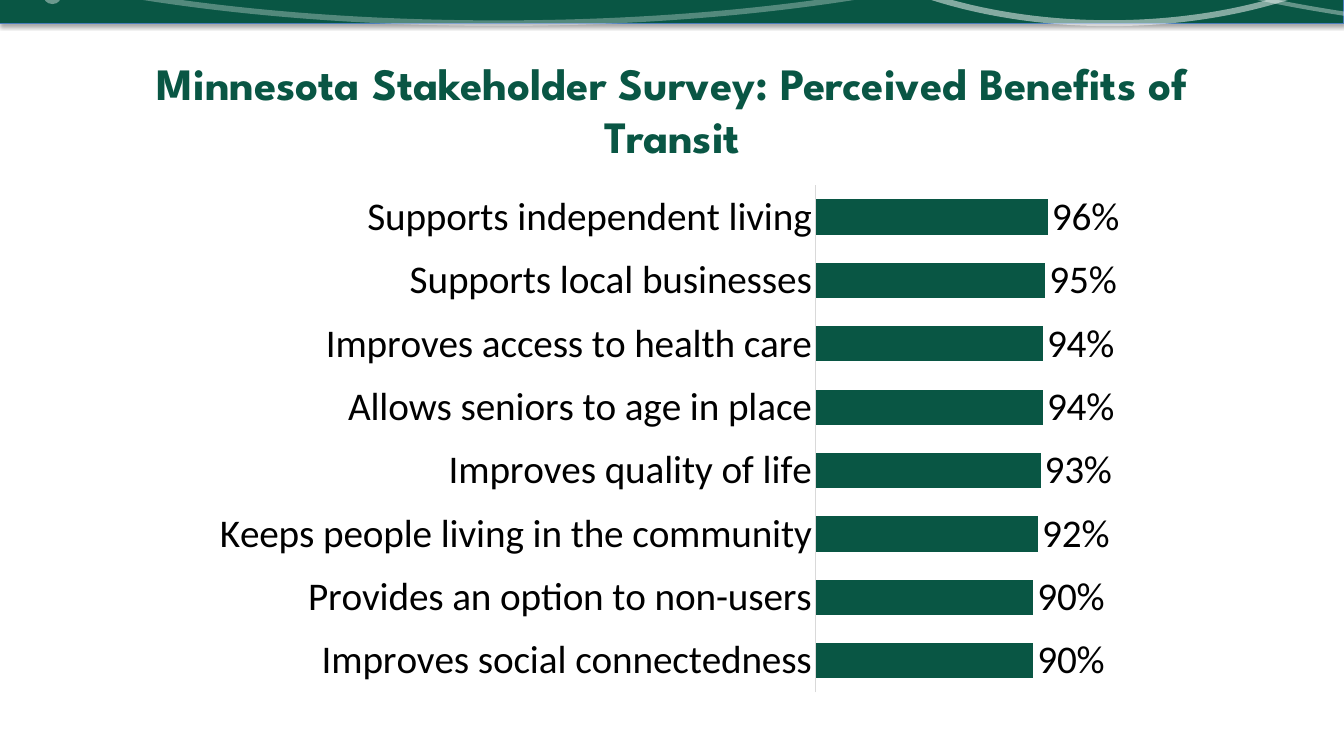
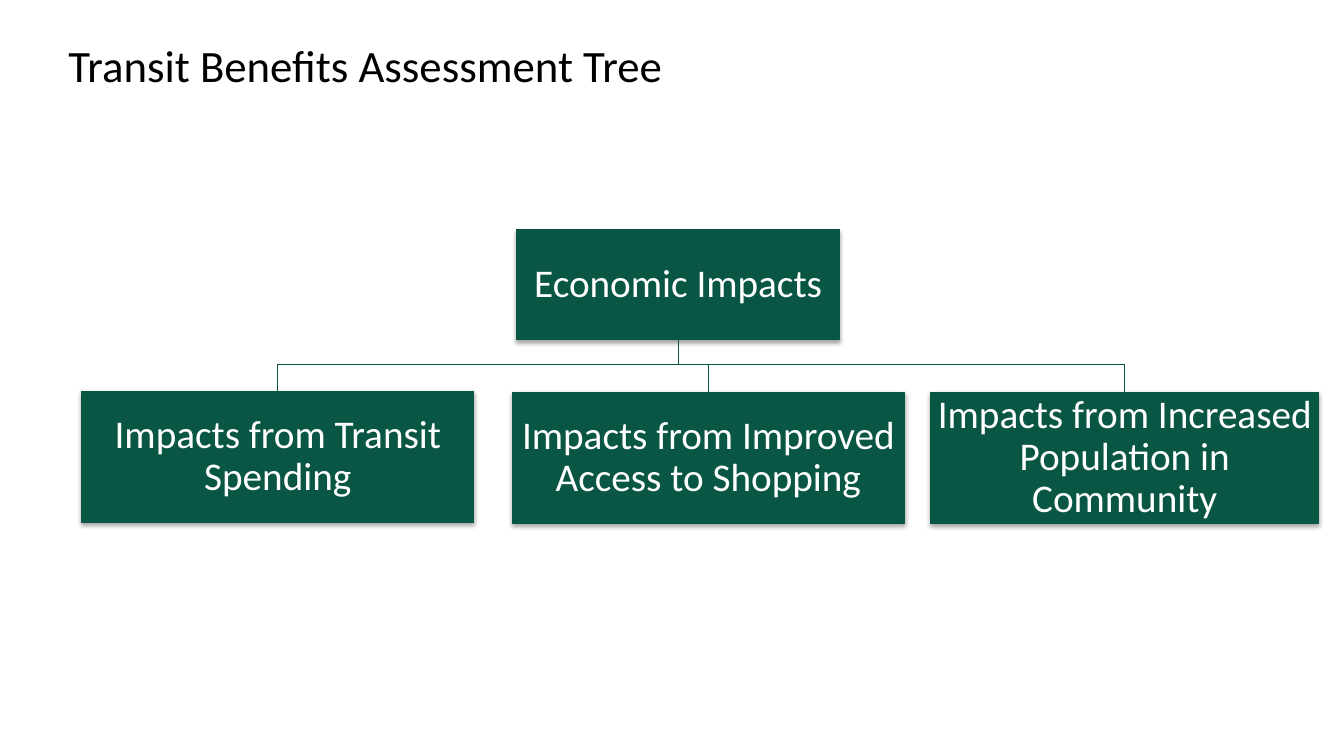
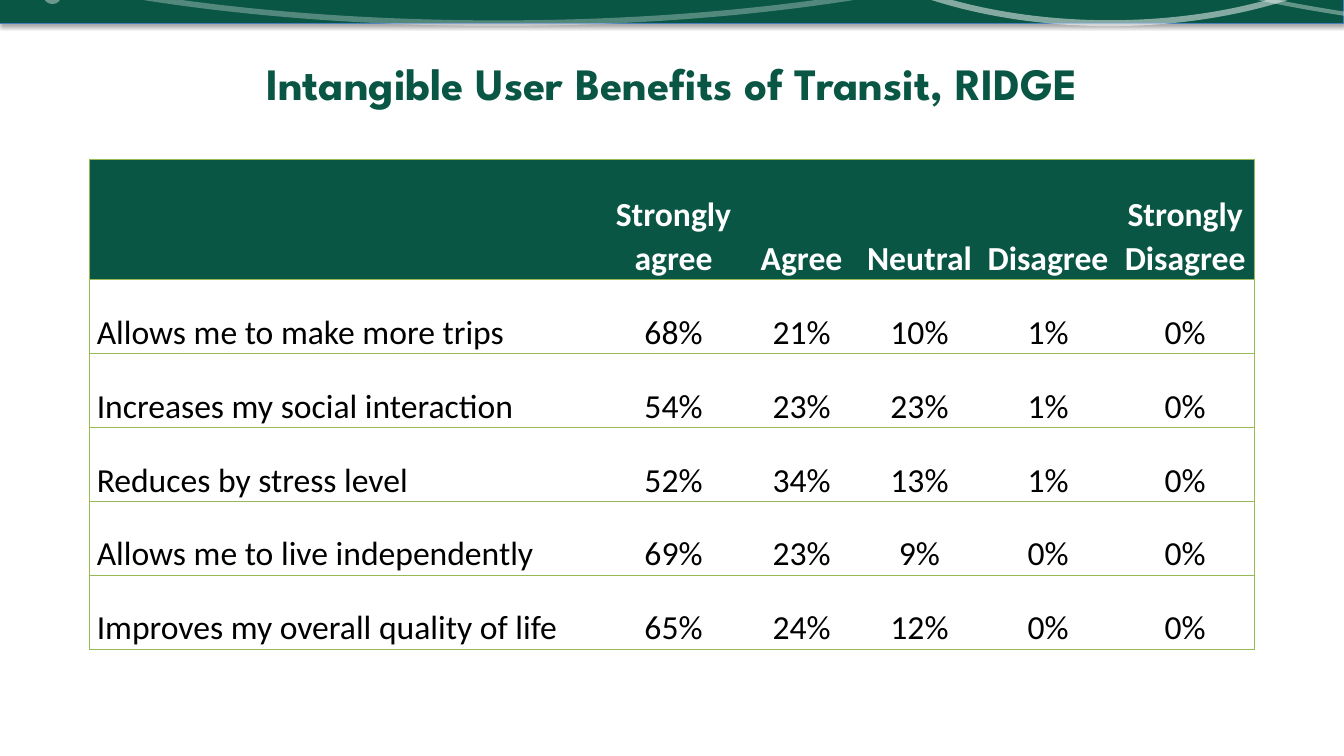
"""Build three slides on the benefits of transit: a bar chart, a tree and a table."""
from lxml import etree
from pptx import Presentation
from pptx.chart.data import CategoryChartData
from pptx.dml.color import RGBColor
from pptx.enum.chart import XL_CHART_TYPE, XL_LABEL_POSITION, XL_TICK_MARK
from pptx.enum.shapes import MSO_SHAPE
from pptx.enum.text import MSO_ANCHOR, MSO_AUTO_SIZE, PP_ALIGN
from pptx.oxml.ns import qn
from pptx.util import Inches, Pt

GREEN = RGBColor(0x09, 0x56, 0x44)
LIME = RGBColor(0x98, 0xB9, 0x55)
BLUE = RGBColor(0x4B, 0x7E, 0xBC)
GRAY = RGBColor(0xD9, 0xD9, 0xD9)
WHITE = RGBColor(0xFF, 0xFF, 0xFF)
BLACK = RGBColor(0x00, 0x00, 0x00)

BODY_FONT = "Calibri"
TITLE_FONT = "League Spartan"
HAIRLINE = Pt(0.75)

RECTANGLE = MSO_SHAPE.RECTANGLE
OVAL = MSO_SHAPE.OVAL
CENTER = PP_ALIGN.CENTER
LEFT = PP_ALIGN.LEFT
MIDDLE = MSO_ANCHOR.MIDDLE
BOTTOM = MSO_ANCHOR.BOTTOM
BAR_CLUSTERED = XL_CHART_TYPE.BAR_CLUSTERED
OUTSIDE_END = XL_LABEL_POSITION.OUTSIDE_END
NO_TICK = XL_TICK_MARK.NONE
GROW = MSO_AUTO_SIZE.SHAPE_TO_FIT_TEXT

BAND_ARCS = [
    ((-2.22, -3.75, 14.33, 3.98), 4, 30),
    ((7.67, -3.2, 6.67, 3.43), 4.25, 50),
    ((10.49, -2.5, 13.96, 2.92), 3, 37),
]

CHART_PLACE = (-0.85, 1.64, 12.98, 5.6)
PLOT_PLACE = (8.09, 1.84, 2.4, 5.03)
BENEFITS = [
    ("Supports independent living", 0.96),
    ("Supports local businesses", 0.95),
    ("Improves access to health care", 0.94),
    ("Allows seniors to age in place", 0.94),
    ("Improves quality of life", 0.93),
    ("Keeps people living in the community", 0.92),
    ("Provides an option to non-users", 0.9),
    ("Improves social connectedness", 0.9),
]

IMPACTS = [
    ("Impacts from Transit Spending", (0.81, 3.88, 3.89, 1.3)),
    ("Impacts from Improved Access to Shopping", (5.08, 3.89, 3.89, 1.3)),
    ("Impacts from Increased Population in Community", (9.23, 3.89, 3.85, 1.3)),
]

ANSWERS = [
    ("", "Strongly agree", "Agree", "Neutral", "Disagree", "Strongly Disagree"),
    ("Allows me to make more trips", "68%", "21%", "10%", "1%", "0%"),
    ("Increases my social interaction", "54%", "23%", "23%", "1%", "0%"),
    ("Reduces by stress level", "52%", "34%", "13%", "1%", "0%"),
    ("Allows me to live independently", "69%", "23%", "9%", "0%", "0%"),
    ("Improves my overall quality of life", "65%", "24%", "12%", "0%", "0%"),
]
COLUMN_WIDTHS = [5.09, 1.4, 1.14, 1.2, 1.35, 1.37]
TABLE_HEIGHT, HEADER_HEIGHT = 4.86, 1.19


def style_font(font, size, color, name=BODY_FONT, bold=False):
    font.name = name
    font.size = Pt(size)
    font.bold = bold
    font.color.rgb = color


def write(para, text, size, color, align=LEFT, **style):
    para.alignment = align
    span = para.add_run()
    span.text = text
    style_font(span.font, size, color, **style)


def add_shape(page, kind, place):
    shape = page.shapes.add_shape(kind, *map(Inches, place))
    shape.shadow.inherit = False
    return shape


def set_alpha(fill_parent, percent):
    color = next(fill_parent.iter(qn("a:srgbClr")))
    etree.SubElement(color, qn("a:alpha")).set("val", str(percent * 1000))


def add_shadow(shape):
    effects = shape._element.spPr.find(qn("a:effectLst"))
    shadow = etree.SubElement(effects, qn("a:outerShdw"), blurRad=str(Pt(3.1)),
                              dist=str(Pt(1.8)), dir="5400000", rotWithShape="0")
    color = etree.SubElement(shadow, qn("a:srgbClr"), val="000000")
    etree.SubElement(color, qn("a:alpha"), val="35000")


def add_panel(page, place, line_color):
    panel = add_shape(page, RECTANGLE, place)
    panel.fill.solid()
    panel.fill.fore_color.rgb = GREEN
    panel.line.color.rgb = line_color
    panel.line.width = HAIRLINE
    add_shadow(panel)
    return panel


def add_band(page):
    add_panel(page, (0, -0.17, 13.33, 0.4), BLUE)
    for place, width, opacity in BAND_ARCS:
        arc = add_shape(page, OVAL, place)
        arc.fill.background()
        arc.line.color.rgb = WHITE
        arc.line.width = Pt(width)
        set_alpha(arc.line._ln, opacity)
    dot = add_shape(page, OVAL, (0.44, -0.08, 0.16, 0.12))
    dot.fill.solid()
    dot.fill.fore_color.rgb = WHITE
    dot.line.fill.background()
    set_alpha(dot._element.spPr, 40)


def add_page(deck):
    return deck.slides.add_slide(deck.slide_layouts[6])


def add_banded_page(deck, title):
    page = add_page(deck)
    add_band(page)
    box = page.shapes.add_textbox(*map(Inches, (0.89, 0.5, 11.56, 0.55)))
    box.text_frame.word_wrap = True
    write(box.text_frame.paragraphs[0], title, 32, GREEN, CENTER,
          name=TITLE_FONT, bold=True)
    return page


def place_plot(chart):
    plot_area = chart._chartSpace.chart.plotArea
    for old in plot_area.findall(qn("c:layout")):
        plot_area.remove(old)
    chart_left, chart_top, chart_width, chart_height = CHART_PLACE
    left, top, width, height = PLOT_PLACE
    settings = {
        "layoutTarget": "inner", "xMode": "edge", "yMode": "edge",
        "x": (left - chart_left) / chart_width,
        "y": (top - chart_top) / chart_height,
        "w": width / chart_width,
        "h": height / chart_height,
    }
    layout = etree.Element(qn("c:layout"))
    manual = etree.SubElement(layout, qn("c:manualLayout"))
    for tag, value in settings.items():
        etree.SubElement(manual, qn(f"c:{tag}"), val=str(value))
    plot_area.insert(0, layout)


def add_benefit_chart(page):
    data = CategoryChartData(number_format="0%")
    data.categories = [name for name, _ in BENEFITS]
    data.add_series("Series 1", [share for _, share in BENEFITS])
    place = map(Inches, CHART_PLACE)
    chart = page.shapes.add_chart(BAR_CLUSTERED, *place, data).chart
    chart.has_legend = False
    chart.has_title = False
    style_font(chart.font, 10, BLACK)
    place_plot(chart)

    names = chart.category_axis
    names.reverse_order = True
    names.major_tick_mark = NO_TICK
    names.format.line.color.rgb = GRAY
    names.format.line.width = HAIRLINE
    style_font(names.tick_labels.font, 28, BLACK)

    scale = chart.value_axis
    scale.minimum_scale, scale.maximum_scale = 0, 1
    scale.has_major_gridlines = False
    scale.visible = False

    plot = chart.plots[0]
    plot.gap_width = 80
    plot.vary_by_categories = False
    bars = plot.series[0].format.fill
    bars.solid()
    bars.fore_color.rgb = GREEN
    plot.has_data_labels = True
    labels = plot.data_labels
    labels.show_value = True
    labels.number_format = "0%"
    labels.number_format_is_linked = False
    labels.position = OUTSIDE_END
    style_font(labels.font, 28, BLACK)


def add_tree_box(page, text, place):
    box = add_panel(page, place, GREEN)
    frame = box.text_frame
    frame.word_wrap = True
    frame.vertical_anchor = MIDDLE
    frame.margin_left = frame.margin_right = Inches(0.02)
    frame.margin_top = frame.margin_bottom = Inches(0.02)
    frame.paragraphs[0].line_spacing = 0.9
    write(frame.paragraphs[0], text, 28, WHITE, CENTER)
    return box


def center_of(box):
    return box.left + box.width // 2


def add_branch(page, parent, child):
    fork = Inches(3.62)
    start, end = center_of(parent), center_of(child)
    outline = page.shapes.build_freeform(start, parent.top + parent.height)
    outline.add_line_segments([(start, fork), (end, fork), (end, child.top)],
                              close=False)
    branch = outline.convert_to_shape()
    branch.shadow.inherit = False
    branch.fill.background()
    branch.line.color.rgb = GREEN
    branch.line.width = HAIRLINE


def add_impact_tree(page):
    root = add_tree_box(page, "Economic Impacts", (5.12, 2.28, 3.21, 1.09))
    for text, place in IMPACTS:
        add_branch(page, root, add_tree_box(page, text, place))


def set_borders(cell, lined_sides):
    properties = cell._tc.get_or_add_tcPr()
    for position, side in enumerate("LRTB"):
        line = etree.Element(qn(f"a:ln{side}"), w=str(HAIRLINE))
        if side in lined_sides:
            fill = etree.SubElement(line, qn("a:solidFill"))
            etree.SubElement(fill, qn("a:srgbClr"), val=str(LIME))
        else:
            etree.SubElement(line, qn("a:noFill"))
        properties.insert(position, line)


def fill_cell(cell, text, is_header, align):
    cell.vertical_anchor = BOTTOM
    cell.margin_left = cell.margin_right = Inches(0.07)
    cell.margin_top = cell.margin_bottom = 0
    if is_header:
        cell.fill.solid()
        cell.fill.fore_color.rgb = GREEN
    else:
        cell.fill.background()
    if text:
        para = cell.text_frame.paragraphs[0]
        para.line_spacing = 1.07
        write(para, text, 24, WHITE if is_header else BLACK, align, bold=is_header)


def add_answer_table(page):
    body_rows = len(ANSWERS) - 1
    row_height = (TABLE_HEIGHT - HEADER_HEIGHT) / body_rows
    heights = [HEADER_HEIGHT] + [row_height] * body_rows
    place = map(Inches, (0.89, 1.58, sum(COLUMN_WIDTHS), TABLE_HEIGHT))
    table = page.shapes.add_table(len(ANSWERS), len(COLUMN_WIDTHS), *place).table
    table.horz_banding = False
    for column, width in zip(table.columns, COLUMN_WIDTHS):
        column.width = Inches(width)
    for row, height in zip(table.rows, heights):
        row.height = Inches(height)
    last = len(COLUMN_WIDTHS) - 1
    for row_index, answers in enumerate(ANSWERS):
        for column_index, text in enumerate(answers):
            cell = table.cell(row_index, column_index)
            fill_cell(cell, text, row_index == 0, CENTER if column_index else LEFT)
            outer = {0: "L", last: "R"}.get(column_index, "")
            set_borders(cell, "TB" + outer)


def add_plain_title(page, text):
    box = page.shapes.add_textbox(*map(Inches, (0.58, 0.33, 6.15, 0.64)))
    box.text_frame.word_wrap = False
    box.text_frame.auto_size = GROW
    write(box.text_frame.paragraphs[0], text, 32, BLACK)


def main():
    deck = Presentation()
    deck.slide_width, deck.slide_height = Inches(13.33), Inches(7.5)

    page = add_banded_page(
        deck, "Minnesota Stakeholder Survey: Perceived Benefits of Transit")
    add_benefit_chart(page)

    page = add_page(deck)
    add_impact_tree(page)
    add_plain_title(page, "Transit Benefits Assessment Tree")

    page = add_banded_page(deck, "Intangible User Benefits of Transit, RIDGE")
    add_answer_table(page)

    deck.save("out.pptx")


if __name__ == "__main__":
    main()
